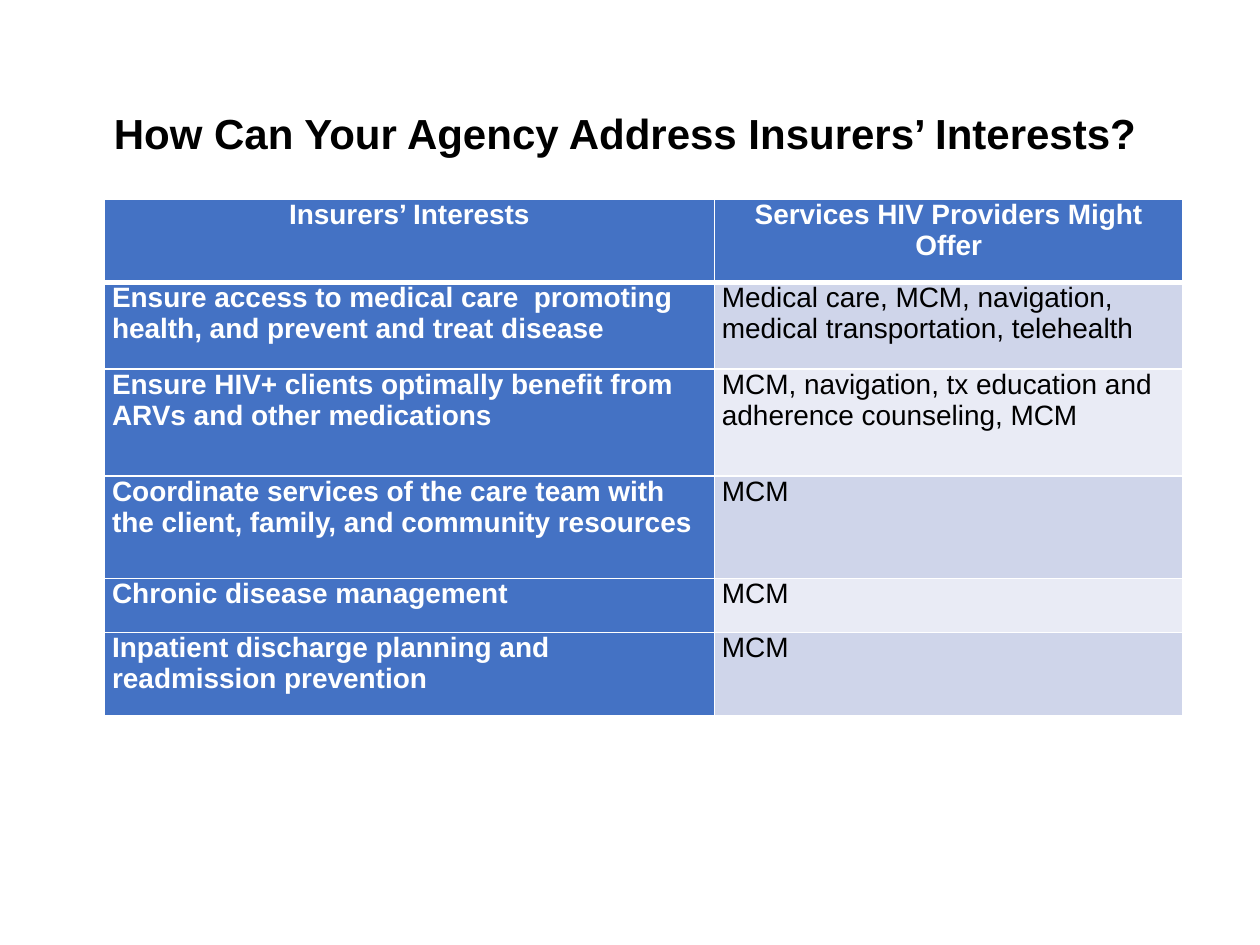
import pptx
import pptx.dml.color
import pptx.enum.text
import pptx.oxml
import pptx.oxml.ns
import pptx.util
from pptx.util import Inches

BLUE, WHITE, BLACK = "4472C4", "FFFFFF", "000000"
BANDS = ["CFD5EA", "E9EBF5"]
CENTER = pptx.enum.text.PP_ALIGN.CENTER
COL_WIDTHS = [4.84, 3.72]
ROW_HEIGHTS = [0.66, 0.69, 0.85, 0.81, 0.43, 0.66]
ROWS = [
    ("Insurers’ Interests", "Services HIV Providers Might Offer"),
    ("Ensure access to medical care  promoting health, and prevent and treat disease",
     "Medical care, MCM, navigation, medical transportation, telehealth"),
    ("Ensure HIV+ clients optimally benefit from ARVs and other medications",
     "MCM, navigation, tx education and adherence counseling, MCM"),
    ("Coordinate services of the care team with the client, family, and community resources",
     "MCM"),
    ("Chronic disease management", "MCM"),
    ("Inpatient discharge planning and readmission prevention", "MCM"),
]


def rgb(color):
    return pptx.dml.color.RGBColor.from_string(color)


def add_run(p, text, size, color, bold):
    r = p.add_run()
    r.text = text
    r.font.name = "Arial"
    r.font.size = pptx.util.Pt(size)
    r.font.bold = bold
    r.font.color.rgb = rgb(color)


def set_borders(cell, bottom_width, top_width):
    """Draw white cell borders; call before filling, as lines precede the fill."""
    tc_pr = cell._tc.get_or_add_tcPr()
    for side, width in (("L", 1), ("R", 1), ("T", top_width), ("B", bottom_width)):
        tc_pr.append(pptx.oxml.parse_xml(
            f'<a:ln{side} {pptx.oxml.ns.nsdecls("a")} w="{pptx.util.Pt(width)}">'
            f'<a:solidFill><a:srgbClr val="{WHITE}"/></a:solidFill></a:ln{side}>'))


def add_title(slide, left, top, width, height):
    sp = slide.shapes.add_textbox(Inches(left), Inches(top), Inches(width), Inches(height))
    tf = sp.text_frame
    tf.word_wrap = True
    tf.vertical_anchor = pptx.enum.text.MSO_ANCHOR.MIDDLE
    p = tf.paragraphs[0]
    p.alignment = CENTER
    p.line_spacing = 0.9
    add_run(p, "How Can Your Agency Address Insurers’ Interests?", 24, BLACK, True)


def fill_cell(cell, text, row, col):
    header = row == 0
    strong = header or col == 0
    set_borders(cell, 3 if header else 1, 3 if row == 1 else 1)
    cell.fill.solid()
    cell.fill.fore_color.rgb = rgb(BLUE if strong else BANDS[(row - 1) % 2])
    cell.margin_left = cell.margin_right = Inches(0.06)
    cell.margin_top = cell.margin_bottom = 0
    p = cell.text_frame.paragraphs[0]
    if header:
        p.alignment = CENTER
    else:
        p.space_before = p.space_after = pptx.util.Pt(2)
    add_run(p, text, 16, WHITE if strong else BLACK, strong)


def add_interests_table(slide, left, top):
    table = slide.shapes.add_table(
        len(ROWS), len(COL_WIDTHS), Inches(left), Inches(top),
        Inches(sum(COL_WIDTHS)), Inches(sum(ROW_HEIGHTS))).table
    for column, width in zip(table.columns, COL_WIDTHS):
        column.width = Inches(width)
    for i, (height, texts) in enumerate(zip(ROW_HEIGHTS, ROWS)):
        table.rows[i].height = Inches(height)
        for j, text in enumerate(texts):
            fill_cell(table.cell(i, j), text, i, j)


def main():
    prs = pptx.Presentation()
    prs.slide_width, prs.slide_height = Inches(10), Inches(7.5)
    slide = prs.slides.add_slide(prs.slide_layouts[6])
    add_interests_table(slide, 0.83, 1.58)
    add_title(slide, 0.5, 0.58, 8.92, 1)
    prs.save("out.pptx")


if __name__ == "__main__":
    main()
